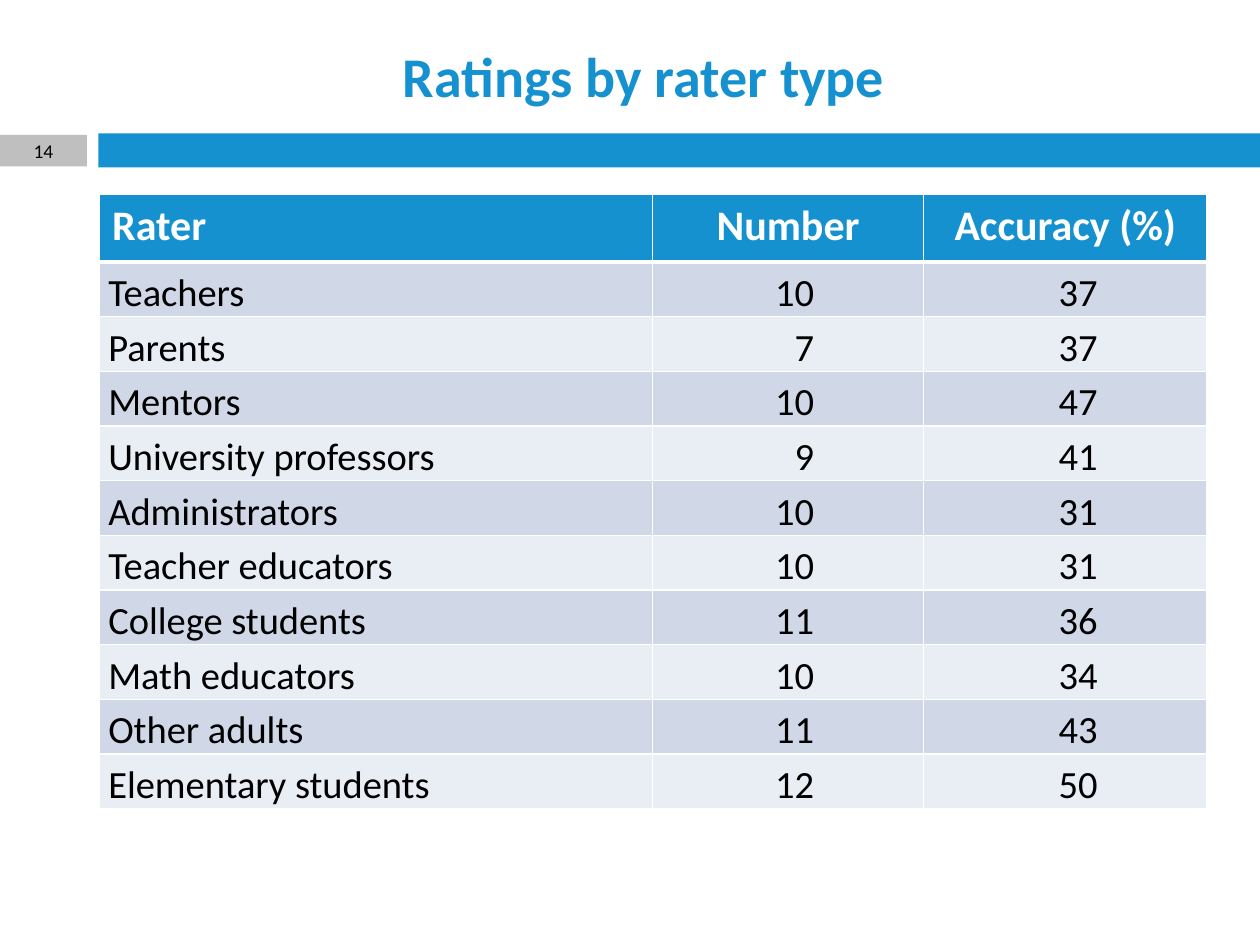
from dataclasses import dataclass

from lxml import etree
from pptx import Presentation
from pptx.dml.color import RGBColor
from pptx.enum.shapes import MSO_SHAPE
from pptx.enum.text import MSO_ANCHOR, PP_ALIGN
from pptx.oxml.ns import qn
from pptx.slide import Slide
from pptx.table import Table, _Cell
from pptx.util import Inches, Pt

RECTANGLE = MSO_SHAPE.RECTANGLE
MIDDLE, BOTTOM, TOP = MSO_ANCHOR.MIDDLE, MSO_ANCHOR.BOTTOM, MSO_ANCHOR.TOP
LEFT, CENTER, RIGHT = PP_ALIGN.LEFT, PP_ALIGN.CENTER, PP_ALIGN.RIGHT

FONT = "Calibri"
COLORS = {
    "accent": "1691D0",
    "number_box": "BFBFBF",
    "band_dark": "D0D8E8",
    "band_light": "E9EDF4",
    "white": "FFFFFF",
    "black": "000000",
}
COLUMN_WIDTHS = (4.39, 2.15, 2.25)
HEADER_HEIGHT = 0.54
ROW_HEIGHT = 0.434
HEADERS = ("Rater", "Number", "Accuracy (%)")


@dataclass(frozen=True)
class Box:
    left: float
    top: float
    width: float
    height: float

    def lengths(self) -> tuple:
        return tuple(Inches(v) for v in (self.left, self.top, self.width, self.height))


@dataclass(frozen=True)
class TextStyle:
    size: float
    color: str
    bold: bool = False


@dataclass(frozen=True)
class Rating:
    rater: str
    number: int
    accuracy: int


TITLE_STYLE = TextStyle(32, "accent", True)
NUMBER_STYLE = TextStyle(11.1, "black")
HEADER_STYLE = TextStyle(24, "white", True)
BODY_STYLE = TextStyle(22, "black")

RATINGS = (
    Rating("Teachers", 10, 37),
    Rating("Parents", 7, 37),
    Rating("Mentors", 10, 47),
    Rating("University professors", 9, 41),
    Rating("Administrators", 10, 31),
    Rating("Teacher educators", 10, 31),
    Rating("College students", 11, 36),
    Rating("Math educators", 10, 34),
    Rating("Other adults", 11, 43),
    Rating("Elementary students", 12, 50),
)


def rgb(name: str) -> RGBColor:
    return RGBColor.from_string(COLORS[name])


def write_text(text_frame, text: str, style: TextStyle, alignment: PP_ALIGN):
    paragraph = text_frame.paragraphs[0]
    paragraph.text = text
    paragraph.alignment = alignment
    paragraph.font.name = FONT
    paragraph.font.size = Pt(style.size)
    paragraph.font.bold = style.bold
    paragraph.font.color.rgb = rgb(style.color)
    return paragraph


def add_bar(slide: Slide, box: Box, color: str) -> None:
    shape = slide.shapes.add_shape(RECTANGLE, *box.lengths())
    shape.shadow.inherit = False
    shape.fill.solid()
    shape.fill.fore_color.rgb = rgb(color)
    shape.line.fill.background()


def add_label(slide: Slide, box: Box, text: str, style: TextStyle) -> None:
    text_frame = slide.shapes.add_textbox(*box.lengths()).text_frame
    text_frame.word_wrap = True
    text_frame.vertical_anchor = MIDDLE
    text_frame.margin_top = text_frame.margin_bottom = 0
    write_text(text_frame, text, style, CENTER)


def set_borders(cell: _Cell, top: float = 1, bottom: float = 1) -> None:
    properties = cell._tc.get_or_add_tcPr()
    for side, width in (("L", 1), ("R", 1), ("T", top), ("B", bottom)):
        line = etree.SubElement(properties, qn(f"a:ln{side}"), w=str(Pt(width)))
        fill = etree.SubElement(line, qn("a:solidFill"))
        etree.SubElement(fill, qn("a:srgbClr"), val=COLORS["white"])


def fill_cell(cell: _Cell, color: str, anchor: MSO_ANCHOR) -> None:
    cell.fill.solid()
    cell.fill.fore_color.rgb = rgb(color)
    cell.vertical_anchor = anchor


def write_header(table: Table) -> None:
    for column, text in enumerate(HEADERS):
        cell = table.cell(0, column)
        set_borders(cell, bottom=3)
        fill_cell(cell, "accent", TOP)
        write_text(cell.text_frame, text, HEADER_STYLE, CENTER if column else LEFT)


def write_rating(table: Table, row: int, rating: Rating) -> None:
    band = "band_dark" if row % 2 else "band_light"
    for column, value in enumerate((rating.rater, rating.number, rating.accuracy)):
        cell = table.cell(row, column)
        set_borders(cell, top=3 if row == 1 else 1)
        fill_cell(cell, band, BOTTOM)
        cell.margin_top = cell.margin_bottom = 0
        cell.margin_left = Inches(0.07)
        cell.margin_right = Inches(0.87 if column else 0.07)
        alignment = RIGHT if column else LEFT
        paragraph = write_text(cell.text_frame, str(value), BODY_STYLE, alignment)
        paragraph.line_spacing = Pt(14)
        paragraph.space_after = Pt(12)


def add_ratings_table(slide: Slide) -> None:
    height = HEADER_HEIGHT + ROW_HEIGHT * len(RATINGS)
    box = Box(0.79, 1.54, sum(COLUMN_WIDTHS), height)
    table = slide.shapes.add_table(
        len(RATINGS) + 1, len(HEADERS), *box.lengths()
    ).table
    for column, width in zip(table.columns, COLUMN_WIDTHS):
        column.width = Inches(width)
    for index, row in enumerate(table.rows):
        row.height = Inches(ROW_HEIGHT if index else HEADER_HEIGHT)
    write_header(table)
    for row_index, rating in enumerate(RATINGS, start=1):
        write_rating(table, row_index, rating)


def main() -> None:
    presentation = Presentation()
    presentation.slide_width = Inches(10)
    presentation.slide_height = Inches(7.5)
    slide = presentation.slides.add_slide(presentation.slide_layouts[6])
    number_box = Box(0, 1.07, 0.69, 0.25)
    add_bar(slide, Box(0.78, 1.06, 9.22, 0.27), "accent")
    add_bar(slide, number_box, "number_box")
    add_label(slide, Box(0.78, 0.26, 8.66, 0.68), "Ratings by rater type", TITLE_STYLE)
    add_label(slide, number_box, "14", NUMBER_STYLE)
    add_ratings_table(slide)
    presentation.save("out.pptx")


if __name__ == "__main__":
    main()
